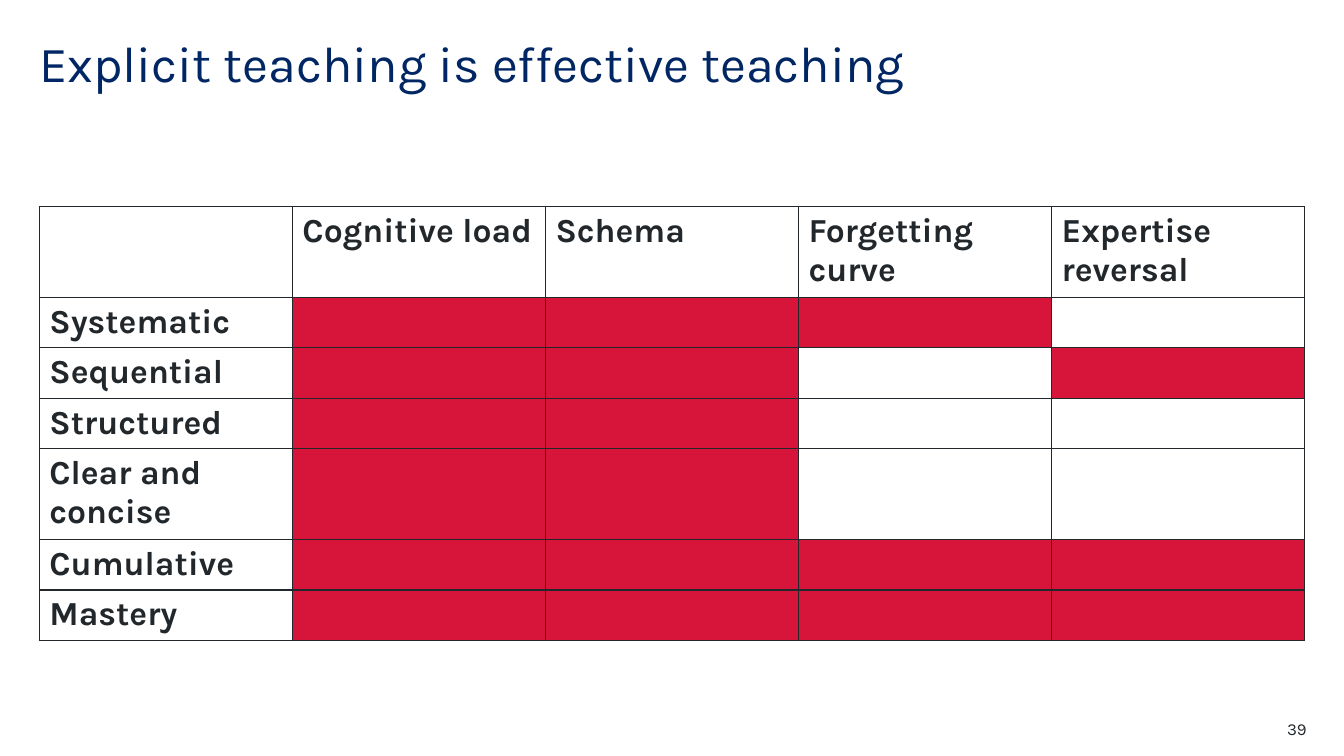
from lxml import etree
from pptx import Presentation
from pptx.dml.color import RGBColor
from pptx.enum.text import PP_ALIGN
from pptx.oxml.ns import qn
from pptx.util import Inches, Pt

LEFT, RIGHT = PP_ALIGN.LEFT, PP_ALIGN.RIGHT
FONT = "Karla"
COLORS = {"navy": "002664", "ink": "22272B", "red": "D7153A", "white": "FFFFFF"}

HEADS = ["", "Cognitive load", "Schema", "Forgetting curve", "Expertise reversal"]
# Each trait is followed by the numbers of its marked columns.
TRAITS = [
    ("Systematic", {1, 2, 3}),
    ("Sequential", {1, 2, 4}),
    ("Structured", {1, 2}),
    ("Clear and concise", {1, 2}),
    ("Cumulative", {1, 2, 3, 4}),
    ("Mastery", {1, 2, 3, 4}),
]


def color(name):
    return RGBColor.from_string(COLORS[name])


def set_font(para, size, tint, bold=False):
    font = para.font
    font.name, font.size, font.bold = FONT, Pt(size), bold
    font.color.rgb = color(tint)


def add_text(slide, text, box, size, tint, align=LEFT, spacing=1.0):
    frame = slide.shapes.add_textbox(*map(Inches, box)).text_frame
    frame.word_wrap = True
    frame.margin_left = frame.margin_right = 0
    frame.margin_top = frame.margin_bottom = 0
    para = frame.paragraphs[0]
    para.text = text
    para.alignment = align
    para.line_spacing = spacing
    set_font(para, size, tint)


def add_border(cell):
    props = cell._tc.get_or_add_tcPr()
    for side in ("lnL", "lnR", "lnT", "lnB"):
        line = etree.SubElement(props, qn(f"a:{side}"), w=str(Pt(1)))
        fill = etree.SubElement(line, qn("a:solidFill"))
        etree.SubElement(fill, qn("a:srgbClr"), val=COLORS["ink"])


def fill_cell(cell, text, tint):
    add_border(cell)
    cell.fill.solid()
    cell.fill.fore_color.rgb = color(tint)
    if text:
        para = cell.text_frame.paragraphs[0]
        para.text = text
        set_font(para, 24, "ink", bold=True)


def add_matrix(slide):
    """Add the table that marks which ideas support each trait."""
    box = map(Inches, (0.39, 2.05, 12.55, 2.83))
    table = slide.shapes.add_table(len(TRAITS) + 1, len(HEADS), *box).table
    table.first_row = table.horz_banding = False
    for col in table.columns:
        col.width = Inches(2.51)
    for num, row in enumerate(table.rows):
        row.height = Inches(0.41 if num else 0.32)
    for col, head in enumerate(HEADS):
        fill_cell(table.cell(0, col), head, "white")
    for row, (trait, marks) in enumerate(TRAITS, 1):
        for col in range(len(HEADS)):
            text = "" if col else trait
            tint = "red" if col in marks else "white"
            fill_cell(table.cell(row, col), text, tint)


def main():
    deck = Presentation()
    deck.slide_width, deck.slide_height = Inches(13.33), Inches(7.5)
    slide = deck.slides.add_slide(deck.slide_layouts[6])
    add_text(slide, "Explicit teaching is effective teaching",
             (0.39, 0.39, 11.02, 1.1), 36, "navy", spacing=0.9)
    add_matrix(slide)
    add_text(slide, "39", (12.17, 7.13, 0.79, 0.2), 12, "ink", align=RIGHT)
    deck.save("out.pptx")


if __name__ == "__main__":
    main()
